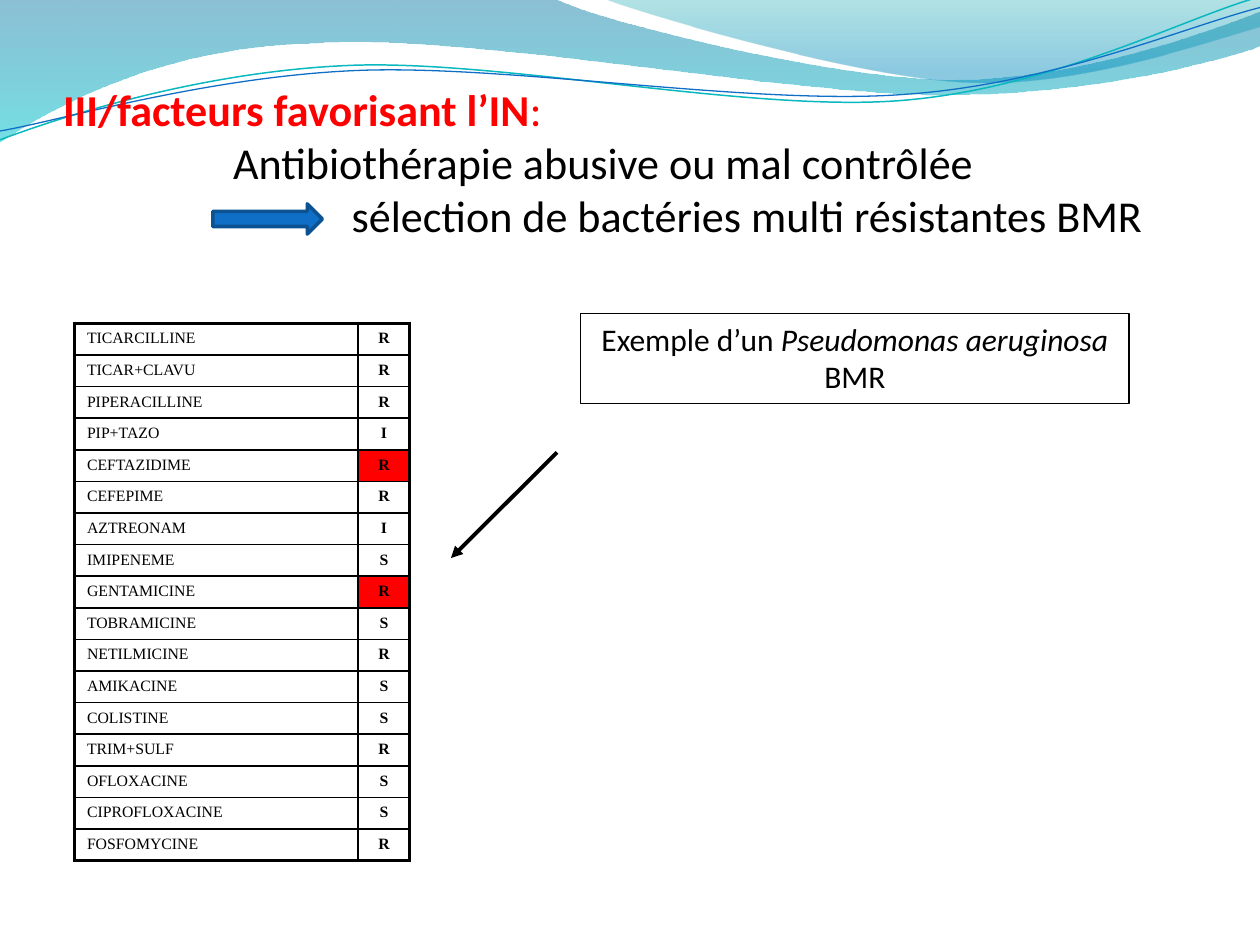
from lxml.etree import SubElement
from pptx import Presentation
from pptx.dml.color import RGBColor
from pptx.enum.shapes import MSO_CONNECTOR as Connector, MSO_SHAPE as Preset
from pptx.enum.text import MSO_ANCHOR as Anchor, MSO_AUTO_SIZE as AutoSize, PP_ALIGN as Align
from pptx.oxml import parse_xml
from pptx.oxml.ns import nsdecls, qn
from pptx.util import Cm, Pt

COLORS = {
    "text": "000000", "alert": "FF0000", "arrow": "0F6FC6", "arrow_edge": "0B5292",
    "deep": "0074A1", "aqua": "00C6CF", "sea": "00A1A9", "sky": "008BBF", "teal": "0AB8BF",
}

# Wave outlines in inches: a start point, then Bézier triples (6 numbers) or line ends (2)
BROAD_WAVE = [
    (0, 0), (4.4, -0.01), (4.76, 0.17, 6.64, 0.63, 7.58, 0.63),
    (8.53, 0.63, 9.58, 0.26, 10, 0.09), (10.01, 0.36),
    (9.83, 0.44, 8.7, 0.76, 7.46, 0.75), (6.22, 0.75, 3.82, 0.28, 2.57, 0.34),
    (1.29, 0.36, 0.46, 0.83, -0.01, 1.13),
]
RIGHT_WAVE = [
    (4.79, -0.01), (5.09, 0.11, 6.82, 0.62, 7.69, 0.65),
    (8.56, 0.69, 9.61, 0.32, 10, 0.21), (10, 0),
]
TEAL_LINE = [
    (0, 1.11), (0.48, 0.93, 1.58, 0.57, 2.77, 0.52),
    (3.95, 0.47, 5.93, 0.89, 7.13, 0.8), (8.33, 0.71, 9.38, 0.15, 9.98, -0.02),
]
BLUE_LINE = [
    (0, 1.04), (0.47, 0.96, 1.64, 0.61, 2.83, 0.56),
    (4.03, 0.51, 5.97, 0.84, 7.17, 0.75), (8.36, 0.67, 9.41, 0.21, 10, 0.06),
]

ANTIBIOGRAM = [
    ("TICARCILLINE", "R"), ("TICAR+CLAVU", "R"), ("PIPERACILLINE", "R"), ("PIP+TAZO", "I"),
    ("CEFTAZIDIME", "R"), ("CEFEPIME", "R"), ("AZTREONAM", "I"), ("IMIPENEME", "S"),
    ("GENTAMICINE", "R"), ("TOBRAMICINE", "S"), ("NETILMICINE", "R"), ("AMIKACINE", "S"),
    ("COLISTINE", "S"), ("TRIM+SULF", "R"), ("OFLOXACINE", "S"), ("CIPROFLOXACINE", "S"),
    ("FOSFOMYCINE", "R"),
]
HIGHLIGHTED = {"CEFTAZIDIME", "GENTAMICINE"}


def rgb(name):
    return RGBColor.from_string(COLORS[name])


def write(paragraph, text, size=18, font="Calibri", color="text", bold=False, italic=False):
    run = paragraph.add_run()
    run.text = text
    run.font.size, run.font.name = Pt(size), font
    run.font.bold, run.font.italic = bold, italic
    run.font.color.rgb = rgb(color)


class SlideBuilder:
    def __init__(self, slide):
        self.slide = slide
        self.shapes = slide.shapes

    def outline(self, shape, color, width):
        shape.line.color.rgb = rgb(color)
        shape.line.width = Pt(width)

    def curve(self, pieces, close):
        points = [(Cm(x * 2.54), Cm(y * 2.54))
                  for piece in pieces for x, y in zip(piece[::2], piece[1::2])]
        builder = self.shapes.build_freeform(*points[0], scale=1.0)
        builder.add_line_segments(points[1:], close=close)
        shape = builder.convert_to_shape()
        shape.shadow.inherit = False
        # Join each triple of line segments into one Bézier segment
        segments = iter(list(shape.element.spPr.iter(qn("a:lnTo"))))
        for piece in pieces[1:]:
            segment = next(segments)
            if len(piece) == 6:
                segment.tag = qn("a:cubicBezTo")
                for follower in (next(segments), next(segments)):
                    segment.append(follower[0])
                    follower.getparent().remove(follower)
        return shape

    def wave(self, pieces, stops):
        shape = self.curve(pieces, True)
        shape.line.fill.background()
        shape.fill.gradient()
        shape.fill.gradient_angle = 270
        for stop, (position, color, _) in zip(shape.fill.gradient_stops, stops):
            stop.position = position
            stop.color.rgb = rgb(color)
        colors = list(shape.element.spPr.iter(qn("a:srgbClr")))
        for element, (_, _, opacity) in zip(colors, stops):
            SubElement(element, qn("a:alpha"), val=str(opacity * 1000))

    def wave_line(self, pieces, color, width):
        shape = self.curve(pieces, False)
        shape.fill.background()
        self.outline(shape, color, width)

    def title(self, lines, box):
        title = self.shapes.title
        title.element.getparent().append(title.element)  # in front of the waves
        title.left, title.top, title.width, title.height = map(Cm, box)
        frame = title.text_frame
        frame.auto_size, frame.word_wrap = AutoSize.NONE, True
        frame.vertical_anchor = Anchor.TOP
        frame.margin_left = frame.margin_right = 0
        frame.margin_top = Cm(0.14)
        for number, (indent, runs) in enumerate(lines):
            paragraph = frame.add_paragraph() if number else frame.paragraphs[0]
            paragraph.alignment = Align.LEFT
            paragraph._p.get_or_add_pPr().set("marL", str(Cm(indent)))
            for text, style in runs:
                write(paragraph, text, size=25.2, **style)

    def shape(self, preset, box, line, width, fill=None):
        shape = self.shapes.add_shape(preset, *map(Cm, box))
        shape.shadow.inherit = False
        if fill:
            shape.fill.solid()
            shape.fill.fore_color.rgb = rgb(fill)
        else:
            shape.fill.background()
        self.outline(shape, line, width)
        return shape

    def label(self, runs, box):
        frame = self.shape(Preset.RECTANGLE, box, "text", 0.75).text_frame
        frame.word_wrap = True
        frame.vertical_anchor = Anchor.TOP
        frame.paragraphs[0].alignment = Align.CENTER
        for text, style in runs:
            write(frame.paragraphs[0], text, **style)

    def pointer(self, start, end):
        line = self.shapes.add_connector(Connector.STRAIGHT, *map(Cm, start + end))
        self.outline(line, "text", 2.25)
        SubElement(line.line._get_or_add_ln(), qn("a:tailEnd"), type="triangle")
        SubElement(line.element.spPr, qn("a:effectLst"))

    def borders(self, cell, widths):
        properties = cell._tc.get_or_add_tcPr()
        for place, (side, width) in enumerate(zip("LRTB", widths)):
            properties.insert(place, parse_xml(
                f'<a:ln{side} {nsdecls("a")} w="{Pt(width)}"><a:solidFill>'
                f'<a:srgbClr val="{COLORS["text"]}"/></a:solidFill></a:ln{side}>'))

    def table(self, rows, widths, box):
        table = self.shapes.add_table(len(rows), len(widths), *map(Cm, box)).table
        table.first_row = table.horz_banding = False
        for column, width in zip(table.columns, widths):
            column.width = Cm(width)
        last_row, last_column = len(rows) - 1, len(widths) - 1
        for r, row in enumerate(rows):
            for c, text in enumerate(row):
                cell = table.cell(r, c)
                if c and row[0] in HIGHLIGHTED:
                    cell.fill.solid()
                    cell.fill.fore_color.rgb = rgb("alert")
                else:
                    cell.fill.background()
                outer = (c == 0, c == last_column, r == 0, r == last_row)
                self.borders(cell, [2.25 if edge else 1 for edge in outer])
                paragraph = cell.text_frame.paragraphs[0]
                paragraph.alignment = Align.CENTER if c else Align.LEFT
                write(paragraph, text, size=9, font="Times New Roman", bold=c > 0)


def main():
    deck = Presentation()
    deck.slide_width, deck.slide_height = Cm(25.4), Cm(19.05)
    page = SlideBuilder(deck.slides.add_slide(deck.slide_layouts[5]))

    # Waves along the top
    page.wave(BROAD_WAVE, [(0, "deep", 45), (1, "aqua", 55)])
    page.wave(RIGHT_WAVE, [(0, "sea", 30), (0.8, "sky", 45)])
    page.wave_line(TEAL_LINE, "teal", 0.85)
    page.wave_line(BLUE_LINE, "arrow", 0.75)

    # Title
    page.title([
        (0, [("III/facteurs favorisant l’IN", {"color": "alert", "bold": True}),
             (":", {"color": "alert"})]),
        (3.43, [("Antibiothérapie abusive ou mal contrôlée", {})]),
        (5.82, [("sélection de bactéries multi résistantes BMR", {})]),
    ], (1.27, 1.52, 22.86, 7.59))

    # Antibiogram and its caption
    page.table(ANTIBIOGRAM, (5.72, 1.04), (1.5, 6.52, 6.76, 10.83))
    page.label([("Exemple d’un ", {}), ("Pseudomonas aeruginosa ", {"italic": True}),
                ("BMR", {})], (11.71, 6.32, 11.05, 1.82))

    # Arrows
    page.pointer((11.23, 9.12), (9.09, 11.25))
    page.shape(Preset.RIGHT_ARROW, (4.29, 4.11, 2.21, 0.61), "arrow_edge", 2, "arrow")

    deck.save("out.pptx")


if __name__ == "__main__":
    main()
